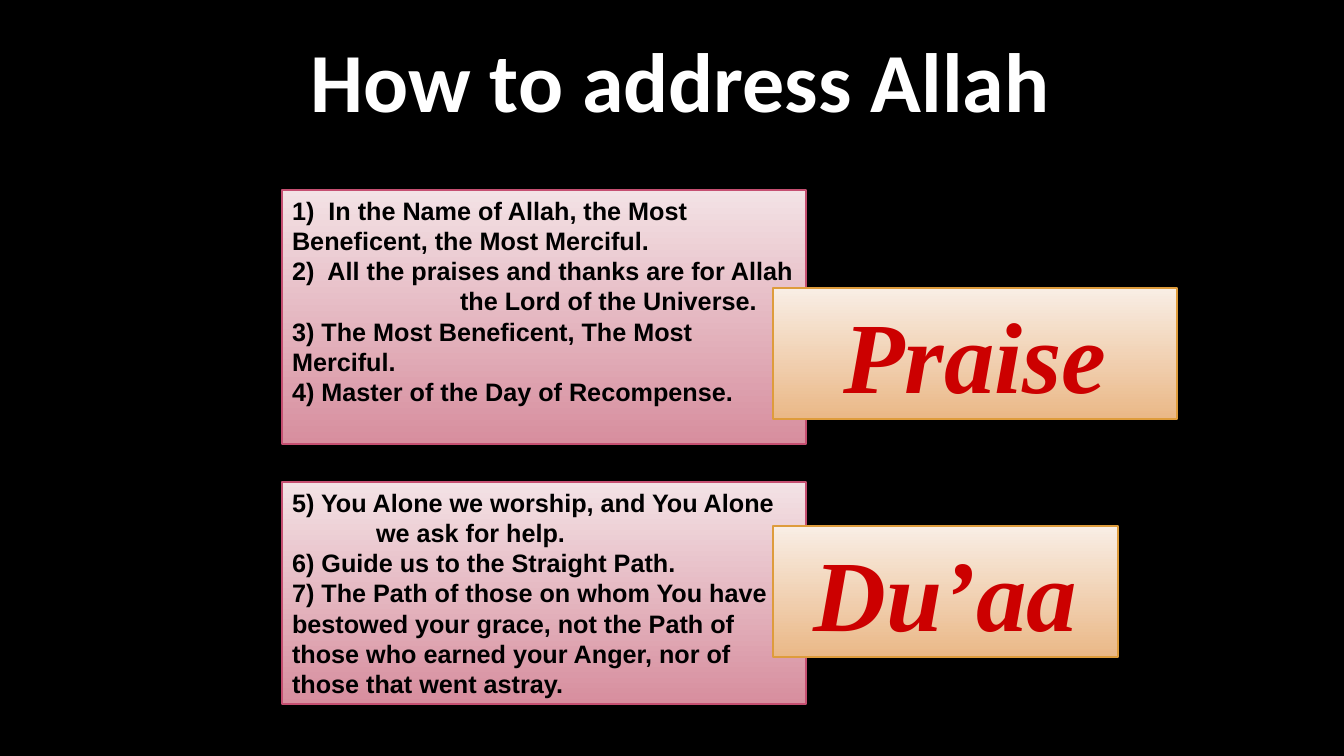
from pptx import Presentation
from pptx.dml.color import RGBColor
from pptx.enum.shapes import MSO_SHAPE
from pptx.enum.text import MSO_ANCHOR, MSO_AUTO_SIZE, PP_ALIGN
from pptx.util import Pt
from lxml.etree import SubElement
from pptx.oxml.ns import qn

PX = 914400 / 100.8
COLORS = {
    "background": "000000",
    "title": "FFFFFF",
    "verse": "000000",
    "label": "CC0000",
    "pink": ("F3E2E5", "D78E9E", "C54F71"),
    "orange": ("F9EEE5", "EAB887", "DE9C3C"),
}


def write(shape, lines, font, size, color, align=PP_ALIGN.LEFT, italic=False,
          wrap=True):
    """Fill a shape with bold text; each line is a (text, left indent in px) pair."""
    frame = shape.text_frame
    frame.word_wrap = wrap
    frame.auto_size = MSO_AUTO_SIZE.NONE
    frame.vertical_anchor = MSO_ANCHOR.TOP
    for number, (text, indent) in enumerate(lines):
        paragraph = frame.paragraphs[0] if number == 0 else frame.add_paragraph()
        paragraph.alignment = align
        paragraph.line_spacing = 1.0
        paragraph.space_before = paragraph.space_after = Pt(0)
        properties = paragraph._p.get_or_add_pPr()
        properties.set("marL", str(round(indent * PX)))
        properties.set("indent", "0")
        SubElement(properties, qn("a:buNone"))
        run = paragraph.add_run()
        run.text = text
        run.font.name = font
        run.font.size = Pt(size)
        run.font.bold = True
        run.font.italic = italic
        run.font.color.rgb = RGBColor.from_string(COLORS[color])


def paint(shape, left, top, width, height, palette):
    """Place a panel and give it a vertical gradient with a thin border."""
    shape.left, shape.top, shape.width, shape.height = (
        round(length * PX) for length in (left, top, width, height))
    *shades, border = COLORS[palette]
    shape.fill.gradient()
    shape.fill.gradient_angle = 270
    for stop, position, shade in zip(shape.fill.gradient_stops, (0, 1), shades):
        stop.position = position
        stop.color.rgb = RGBColor.from_string(shade)
    shape.line.color.rgb = RGBColor.from_string(border)
    shape.line.width = Pt(1)
    shape.shadow.inherit = False


presentation = Presentation()
presentation.slide_width = round(1344 * PX)
presentation.slide_height = round(756 * PX)
slide = presentation.slides.add_slide(
    presentation.slide_layouts.get_by_name("Two Content"))
slide.background.fill.solid()
slide.background.fill.fore_color.rgb = RGBColor.from_string(COLORS["background"])

heading, praise_verses, duaa_verses = list(slide.placeholders)[:3]
heading.left, heading.top, heading.width, heading.height = (
    round(length * PX) for length in (238, 23, 903, 112))
write(heading, [("How to address Allah ", 0)], "Calibri", 60, "title",
      align=PP_ALIGN.CENTER, wrap=False)

sections = [
    (praise_verses, 190, 254, [
        ("1)  In the Name of Allah, the Most Beneficent, the Most Merciful.", 0),
        ("2)  All the praises and thanks are for Allah", 0),
        ("the Lord of the Universe.", 168),
        ("3) The Most Beneficent, The Most Merciful.", 0),
        ("4) Master of the Day of Recompense.", 0),
    ], "Praise", 288, 404),
    (duaa_verses, 482, 222, [
        ("5) You Alone we worship, and You Alone", 0),
        ("we ask for help.", 84),
        ("6) Guide us to the Straight Path.", 0),
        ("7) The Path of those on whom You have bestowed your grace, not the Path "
         "of those who earned your Anger, nor of those that went astray.", 0),
    ], "Du’aa", 526, 345),
]
for verses, top, height, lines, name, label_top, label_width in sections:
    paint(verses, 282, top, 524, height, "pink")
    write(verses, lines, "Arial", 18, "verse")
    label = slide.shapes.add_shape(MSO_SHAPE.RECTANGLE, 0, 0, 0, 0)
    paint(label, 773, label_top, label_width, 131, "orange")
    write(label, [(name, 0)], "Times New Roman", 72, "label",
          align=PP_ALIGN.CENTER, italic=True)

presentation.save("out.pptx")
